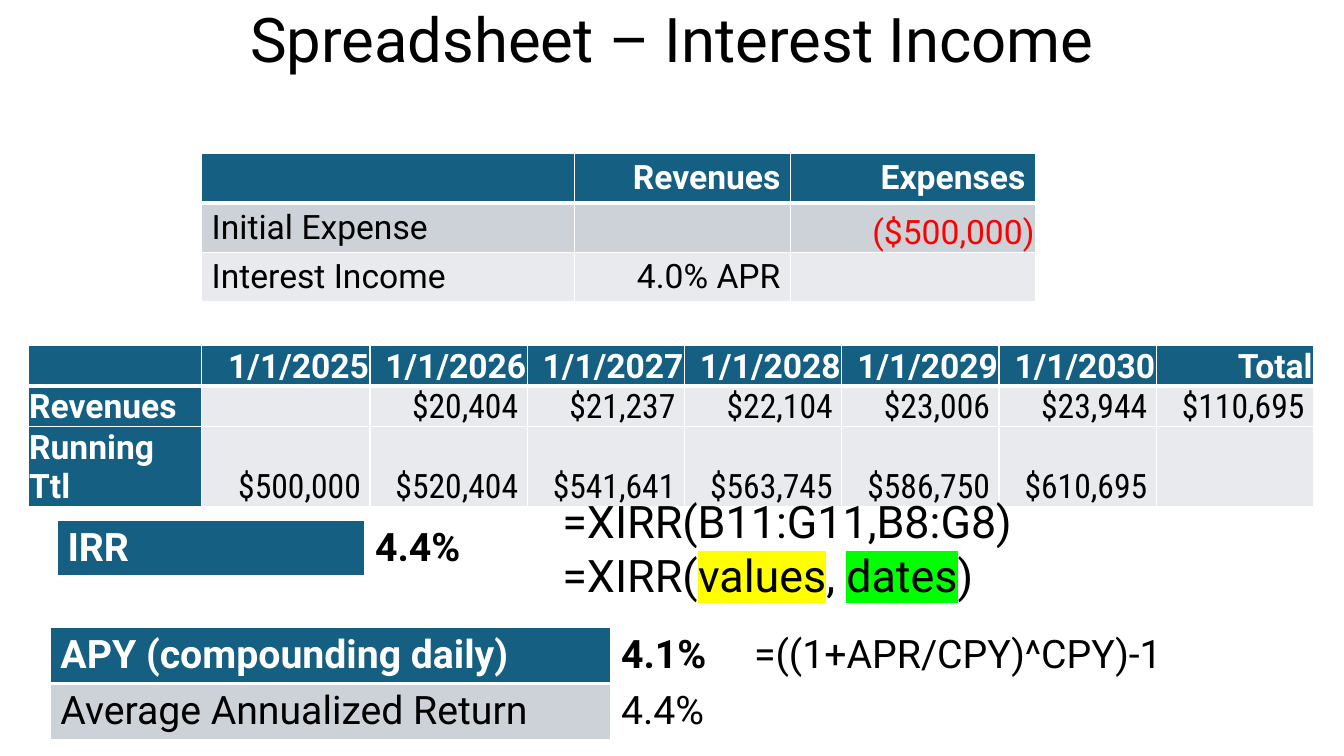
from collections import namedtuple

from lxml import etree
from pptx import Presentation
from pptx.dml.color import RGBColor
from pptx.enum.text import MSO_ANCHOR as Anchor, PP_ALIGN as Align
from pptx.oxml.ns import qn
from pptx.util import Inches, Pt

TEAL = RGBColor(0x15, 0x60, 0x82)
GREY = RGBColor(0xCC, 0xD2, 0xD8)
PALE = RGBColor(0xE8, 0xEA, 0xED)
WHITE = RGBColor(0xFF, 0xFF, 0xFF)
BLACK = RGBColor(0x00, 0x00, 0x00)
RED = RGBColor(0xFF, 0x00, 0x00)
YELLOW = RGBColor(0xFF, 0xFF, 0x00)
GREEN = RGBColor(0x00, 0xFF, 0x00)
FONT, NARROW = "Roboto", "Roboto Condensed"

# Cell looks; margins are left, top, right, bottom in inches
ROOMY = (0.1, 0.05, 0.1, 0.05)
TIGHT = (0.01, 0.01, 0.01, 0)
Look = namedtuple("Look", "fill color bold align font margins anchor",
                  defaults=(BLACK, False, Align.LEFT, FONT, ROOMY, Anchor.TOP))
label = Look(TEAL, WHITE, True)
heading = label._replace(align=Align.RIGHT)
tight_label = label._replace(margins=TIGHT, anchor=Anchor.BOTTOM)
tight_heading = tight_label._replace(align=Align.RIGHT)
amount = Look(PALE, align=Align.RIGHT, font=NARROW,
              margins=(0.01, 0.01, 0.09, 0), anchor=Anchor.BOTTOM)
expense = Look(GREY, RED, align=Align.RIGHT, margins=TIGHT, anchor=Anchor.BOTTOM)
grey, pale, plain = Look(GREY), Look(PALE), Look(WHITE)
pale_right = pale._replace(align=Align.RIGHT)
bold = plain._replace(bold=True)


def style_span(span, size, color, font=FONT, weight=False):
    span.font.name = font
    span.font.size = Pt(size)
    span.font.bold = weight
    span.font.color.rgb = color


def add_grid(left, top, widths, heights, size, rows):
    """Add a table of (text, look) cells with white rules, thick under the first row."""
    table = page.shapes.add_table(
        len(rows), len(widths), Inches(left), Inches(top),
        Inches(sum(widths)), Inches(sum(heights))).table
    table.first_row = table.horz_banding = False
    for column, width in zip(table.columns, widths):
        column.width = Inches(width)
    for row, height in zip(table.rows, heights):
        row.height = Inches(height)
    for r, row in enumerate(rows):
        for c, (text, look) in enumerate(row):
            cell = table.cell(r, c)
            cell.fill.solid()
            cell.fill.fore_color.rgb = look.fill
            (cell.margin_left, cell.margin_top,
             cell.margin_right, cell.margin_bottom) = map(Inches, look.margins)
            cell.vertical_anchor = look.anchor
            if text:
                para = cell.text_frame.paragraphs[0]
                para.text = text
                para.alignment = look.align
                style_span(para.runs[0], size, look.color, look.font, look.bold)
            # Borders come before the fill in the cell properties
            for place, side in enumerate("LRTB"):
                thick = (side == "B" and r == 0) or (side == "T" and r == 1)
                rule = etree.Element(qn(f"a:ln{side}"), w=str(Pt(3 if thick else 1)))
                paint = etree.SubElement(rule, qn("a:solidFill"))
                etree.SubElement(paint, qn("a:srgbClr"), val=str(WHITE))
                cell._tc.get_or_add_tcPr().insert(place, rule)


deck = Presentation()
deck.slide_width, deck.slide_height = Inches(13.33), Inches(7.5)
page = deck.slides.add_slide(deck.slide_layouts[6])

# Yearly revenues and running total
dates = [f"1/1/{year}" for year in range(2025, 2031)]
revenues = ["", "$20,404", "$21,237", "$22,104", "$23,006", "$23,944", "$110,695"]
running = ["$500,000", "$520,404", "$541,641", "$563,745", "$586,750", "$610,695", ""]
add_grid(0.28, 3.43, [1.72, 1.67] + [1.56] * 6, [0.39, 0.4, 0.79], 24, [
    [(text, tight_heading) for text in ["", *dates, "Total"]],
    [("Revenues", tight_label)] + [(text, amount) for text in revenues],
    [("Running Ttl", tight_label)] + [(text, amount) for text in running],
])

# Yield and average return
add_grid(0.5, 6.22, [5.56, 1.32, 5.51], [0.56] * 2, 28, [
    [("APY (compounding daily)", label), ("4.1%", bold), ("=((1+APR/CPY)^CPY)-1", plain)],
    [("Average Annualized Return", grey), ("4.4%", plain), ("", plain)],
])

# Inputs
add_grid(2, 1.52, [3.7, 2.14, 2.43], [0.49] * 3, 24, [
    [("", label), ("Revenues", heading), ("Expenses", heading)],
    [("Initial Expense", grey), ("", grey), ("($500,000)", expense)],
    [("Interest Income", pale), ("4.0% APR", pale_right), ("", pale)],
])

# Title
title = page.shapes.add_textbox(Inches(0.92), 0, Inches(11.5), Inches(0.85)).text_frame
title.word_wrap = True
title.vertical_anchor = Anchor.MIDDLE
para = title.paragraphs[0]
para.text = "Spreadsheet – Interest Income"
para.alignment = Align.CENTER
para.line_spacing = 0.9
style_span(para.runs[0], 44, BLACK)

# Internal rate of return
add_grid(0.57, 5.16, [3.05] * 2, [0.56], 28, [[("IRR", label), ("4.4%", bold)]])

# Formula with highlighted arguments
formula = page.shapes.add_textbox(
    Inches(5.48), Inches(4.85), Inches(6.67), Inches(1.18)).text_frame
formula.word_wrap = True
formula_lines = [
    [("=XIRR(B11:G11,B8:G8)", None)],
    [("=XIRR(", None), ("values", YELLOW), (", ", None), ("dates", GREEN), (")", None)],
]
for i, parts in enumerate(formula_lines):
    para = formula.add_paragraph() if i else formula.paragraphs[0]
    for text, marker in parts:
        span = para.add_run()
        span.text = text
        style_span(span, 32, BLACK)
        if marker is not None:
            highlight = etree.Element(qn("a:highlight"))
            etree.SubElement(highlight, qn("a:srgbClr"), val=str(marker))
            span.font._element.find(qn("a:solidFill")).addnext(highlight)

deck.save("out.pptx")
